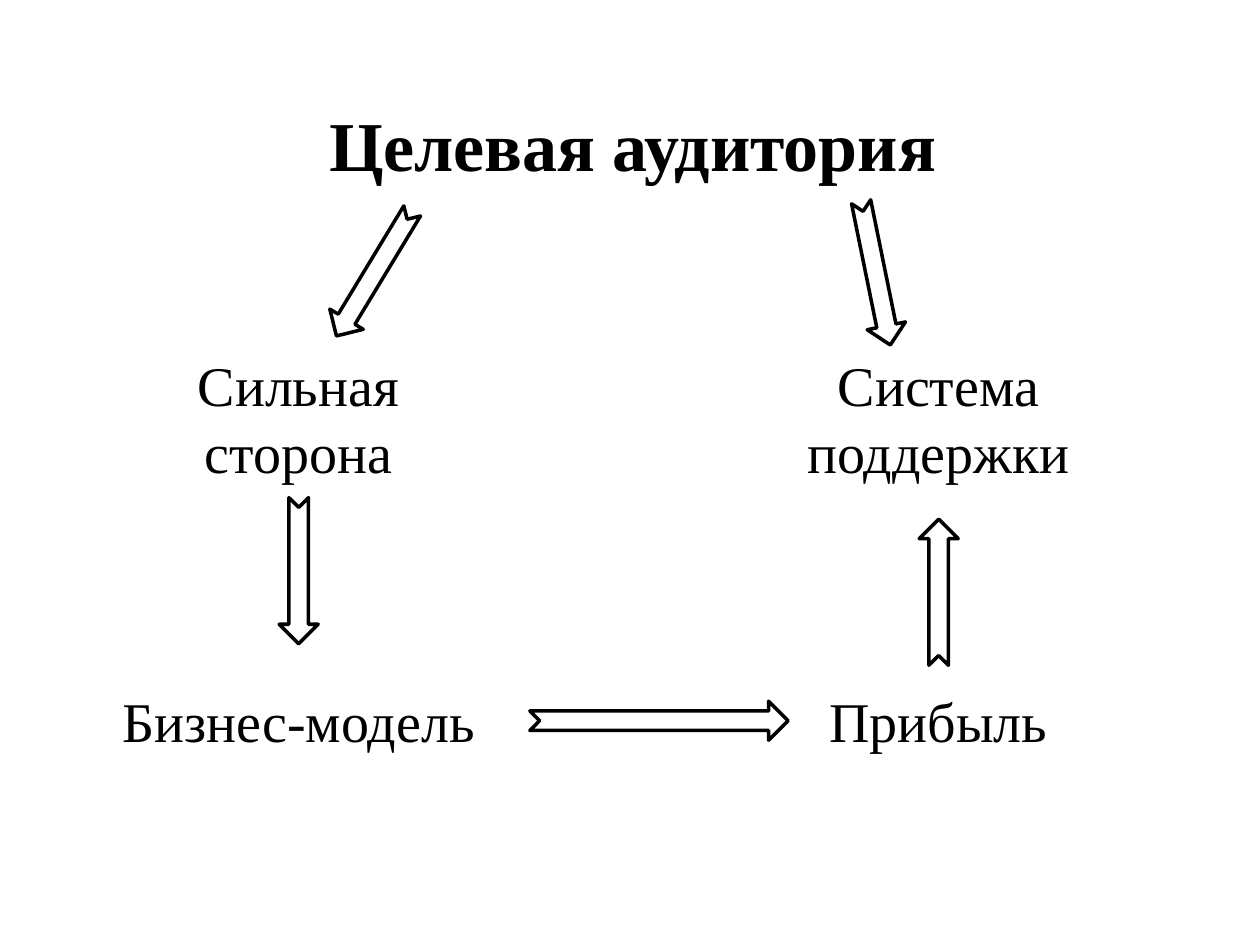
from dataclasses import dataclass

from pptx import Presentation
from pptx.dml.color import RGBColor
from pptx.enum.shapes import MSO_SHAPE
from pptx.enum.text import MSO_ANCHOR, MSO_AUTO_SIZE, PP_ALIGN
from pptx.util import Inches, Pt


@dataclass(frozen=True)
class Theme:
    font: str = "Times New Roman"
    ink: RGBColor = RGBColor(0, 0, 0)
    paper: RGBColor = RGBColor(255, 255, 255)
    title_size: int = 40
    label_size: int = 32
    line_width: int = 2


THEME = Theme()
WIDTH, HEIGHT = 10, 7.5

# Centre lines of the diagram, in inches
LEFT, RIGHT = 2.37, 7.45
UPPER, LOWER = 3.32, 5.72
DIAGONAL_Y = 2.17
ARROW_LENGTH, ARROW_THICKNESS = 1.16, 0.31

# Text, centre x, centre y, width, height
LABELS = [
    ("Сильная\nсторона", LEFT, UPPER, 1.82, 1.18),
    ("Система\nподдержки", RIGHT, UPPER, 2.38, 1.18),
    ("Бизнес-модель", LEFT, LOWER, 3.09, 0.64),
    ("Прибыль", RIGHT, LOWER, 1.94, 0.64),
]
# Centre x, centre y, length, rotation
ARROWS = [
    (2.97, DIAGONAL_Y, ARROW_LENGTH, 121.2),
    (6.95, DIAGONAL_Y, ARROW_LENGTH, 78.5),
    (LEFT, 4.53, ARROW_LENGTH, 90),
    (RIGHT, 4.7, ARROW_LENGTH, 270),
    (5.23, LOWER, 2.05, 0),
]


def centred_box(x, y, width, height):
    return [Inches(v) for v in (x - width / 2, y - height / 2, width, height)]


def write_text(shape, text, size, bold=False):
    frame = shape.text_frame
    frame.text = text
    frame.word_wrap = False
    frame.auto_size = MSO_AUTO_SIZE.SHAPE_TO_FIT_TEXT
    frame.vertical_anchor = MSO_ANCHOR.TOP
    for paragraph in frame.paragraphs:
        paragraph.alignment = PP_ALIGN.CENTER
        font = paragraph.font
        font.name, font.size, font.bold = THEME.font, Pt(size), bold
        font.color.rgb = THEME.ink


def add_title(slide, box):
    title = slide.shapes.title
    title.left, title.top, title.width, title.height = box
    write_text(title, "Целевая аудитория", THEME.title_size, bold=True)


def add_label(slide, text, box):
    write_text(slide.shapes.add_textbox(*box), text, THEME.label_size)


def add_arrow(slide, box, rotation):
    arrow = slide.shapes.add_shape(MSO_SHAPE.NOTCHED_RIGHT_ARROW, *box)
    arrow.rotation = rotation
    arrow.shadow.inherit = False
    arrow.fill.solid()
    arrow.fill.fore_color.rgb = THEME.paper
    arrow.line.color.rgb = THEME.ink
    arrow.line.width = Pt(THEME.line_width)


def add_cycle(slide):
    # Stages of the cycle
    for text, *box in LABELS:
        add_label(slide, text, centred_box(*box))
    # Arrows between the stages
    for x, y, length, rotation in ARROWS:
        add_arrow(slide, centred_box(x, y, length, ARROW_THICKNESS), rotation)


def main():
    presentation = Presentation()
    presentation.slide_width = Inches(WIDTH)
    presentation.slide_height = Inches(HEIGHT)
    slide = presentation.slides.add_slide(presentation.slide_layouts[5])
    slide.background.fill.solid()
    slide.background.fill.fore_color.rgb = THEME.paper
    add_title(slide, centred_box(5.02, 1.14, 5.07, 0.77))
    add_cycle(slide)
    presentation.save("out.pptx")


if __name__ == "__main__":
    main()
